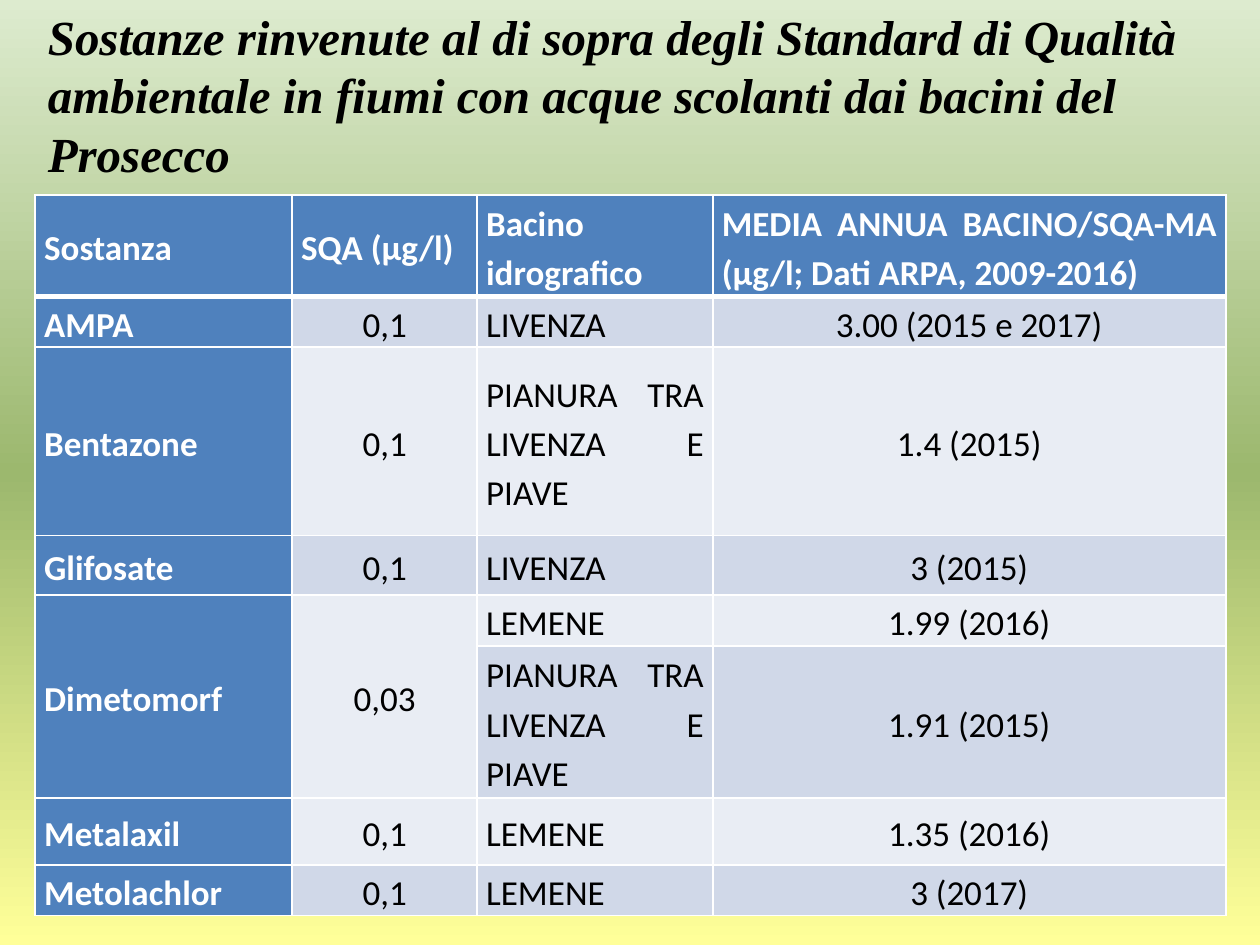
from copy import deepcopy
from dataclasses import dataclass

from lxml import etree
from pptx import Presentation
from pptx.dml.color import RGBColor
from pptx.enum import text as t
from pptx.oxml.ns import qn
from pptx.util import Cm, Pt

HEX = {
    "head": "4F81BD", "odd": "D0D8E8", "even": "E9EDF4",
    "white": "FFFFFF", "black": "000000",
    "top": "DDEBCF", "mid": "9CB86E", "low": "FFFF99",
}
TITLE = ("Sostanze rinvenute al di sopra degli Standard di Qualità ambientale "
         "in fiumi con acque scolanti dai bacini del Prosecco")
COLS = (5.18, 3.73, 4.75, 10.34)
LEFT, WIDTH = Cm(0.71), Cm(24)
PLAIN = "PIANURA TRA LIVENZA E PIAVE"


@dataclass
class Row:
    high: float
    cells: tuple[str, ...]


ROWS = [
    Row(2.05, ("Sostanza", "SQA (µg/l)", "Bacino idrografico",
               "MEDIA ANNUA BACINO/SQA-MA (µg/l; Dati ARPA, 2009-2016)")),
    Row(1.02, ("AMPA", "0,1", "LIVENZA", "3.00 (2015 e 2017)")),
    Row(3.8, ("Bentazone", "0,1", PLAIN, "1.4 (2015)")),
    Row(1.2, ("Glifosate", "0,1", "LIVENZA", "3 (2015)")),
    Row(1.02, ("Dimetomorf", "0,03", "LEMENE", "1.99 (2016)")),
    Row(3.07, ("", "", PLAIN, "1.91 (2015)")),
    Row(1.35, ("Metalaxil", "0,1", "LEMENE", "1.35 (2016)")),
    Row(1.02, ("Metolachlor", "0,1", "LEMENE", "3 (2017)")),
]
SPAN = 4  # first row of the pair that shares substance and limit


def rgb(name: str) -> RGBColor:
    return RGBColor.from_string(HEX[name])


def apply(item, values: dict) -> None:
    for key, value in values.items():
        setattr(item, key, value)


def paint(slide) -> None:
    """Fill the background with a three-stop vertical gradient."""
    fill = slide.background.fill
    fill.gradient()
    fill.gradient_angle = 270
    first = fill.gradient_stops[0]
    stops = fill._fill._gradFill.find(qn("a:gsLst"))
    stops.insert(1, deepcopy(stops[0]))
    for stop, name, place in zip(fill.gradient_stops, ("top", "mid", "low"), (0, 0.5, 1)):
        stop.color.rgb = rgb(name)
        stop.position = place


def edge(cell, widths: dict[str, float]) -> None:
    """Draw white cell borders, one for each side."""
    props = cell._tc.get_or_add_tcPr()
    for side, width in widths.items():
        line = etree.SubElement(props, qn(f"a:ln{side}"), w=str(Pt(width)))
        solid = etree.SubElement(line, qn("a:solidFill"))
        etree.SubElement(solid, qn("a:srgbClr"), val=HEX["white"])


def write(frame, words: str, para: dict, font: dict, color: str) -> None:
    frame.text = words
    line = frame.paragraphs[0]
    apply(line, para)
    apply(line.runs[0].font if line.runs else line.font, font)
    if line.runs:
        line.runs[0].font.color.rgb = rgb(color)


def style(cell, words: str, r: int, c: int) -> None:
    """Format a cell by its place: header row, first column or body."""
    lead = r == 0 or c == 0
    apply(cell, {
        "margin_left": Cm(0.18), "margin_right": Cm(0.18),
        "margin_top": 0, "margin_bottom": 0,
        "vertical_anchor": t.MSO_ANCHOR.MIDDLE,
    })
    edge(cell, {"L": 1, "R": 1, "T": 3 if r == 1 else 1, "B": 3 if r == 0 else 1})
    cell.fill.solid()
    cell.fill.fore_color.rgb = rgb("head" if lead else "odd" if r % 2 else "even")
    mid = r > 0 and c in (1, 3)
    para = {
        "alignment": t.PP_ALIGN.CENTER if mid else t.PP_ALIGN.JUSTIFY,
        "line_spacing": 1.15, "space_after": Pt(10),
    }
    font = {"name": "Calibri", "size": Pt(20), "bold": lead}
    write(cell.text_frame, words, para, font, "white" if lead else "black")


def grid(slide) -> None:
    high = Cm(sum(row.high for row in ROWS))
    table = slide.shapes.add_table(
        len(ROWS), len(COLS), LEFT, Cm(3.93), WIDTH, high).table
    for col, wide in zip(table.columns, COLS):
        col.width = Cm(wide)
    for r, row in enumerate(ROWS):
        table.rows[r].height = Cm(row.high)
        for c, words in enumerate(row.cells):
            style(table.cell(r, c), words, r, c)
    for c in (0, 1):
        table.cell(SPAN, c).merge(table.cell(SPAN + 1, c))


def head(slide) -> None:
    title = slide.shapes.title
    apply(title, {"left": LEFT, "top": Cm(-0.08), "width": WIDTH, "height": Cm(3.96)})
    frame = title.text_frame
    apply(frame, {
        "word_wrap": True, "auto_size": t.MSO_AUTO_SIZE.NONE,
        "vertical_anchor": t.MSO_ANCHOR.MIDDLE,
    })
    font = {"name": "Times New Roman", "size": Pt(28), "bold": True, "italic": True}
    write(frame, TITLE, {"alignment": t.PP_ALIGN.LEFT}, font, "black")


def main() -> None:
    deck = Presentation()
    apply(deck, {"slide_width": Cm(25.4), "slide_height": Cm(19.05)})
    slide = deck.slides.add_slide(deck.slide_layouts[5])
    paint(slide)
    head(slide)
    grid(slide)
    deck.save("out.pptx")


if __name__ == "__main__":
    main()
